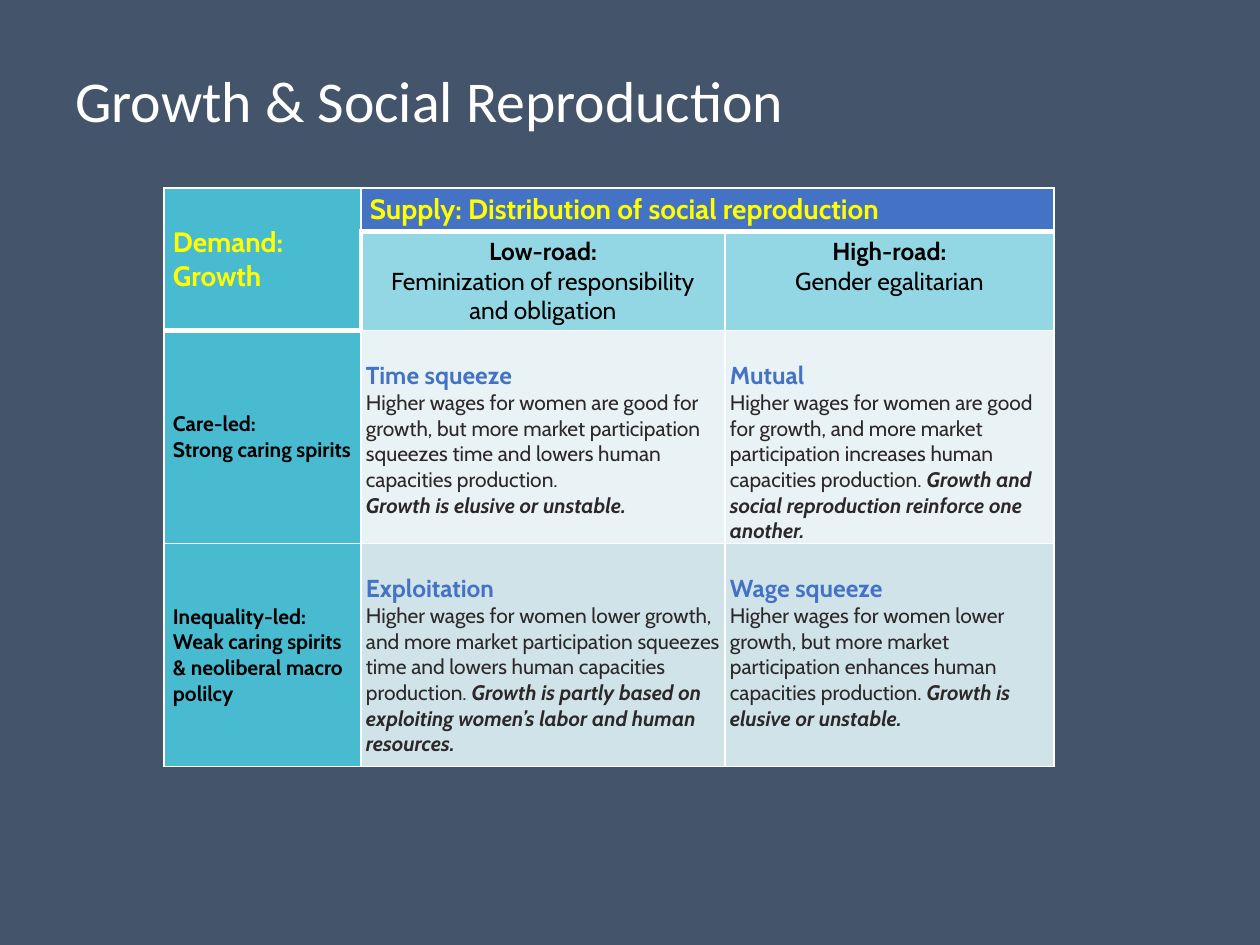
import dataclasses

import pptx
import pptx.dml.color
import pptx.enum.text
import pptx.util
from lxml import etree
from pptx.oxml.ns import qn

ANCHOR = pptx.enum.text.MSO_ANCHOR
ALIGN = pptx.enum.text.PP_ALIGN


@dataclasses.dataclass(frozen=True)
class Theme:
    background: str = "44546A"
    white: str = "FFFFFF"
    black: str = "000000"
    yellow: str = "FFFF00"
    body: str = "2C2728"
    blue: str = "4472C4"
    teal: str = "49BBD1"
    light_teal: str = "94D7E4"
    upper_band: str = "E9F2F4"
    lower_band: str = "CFE3E8"
    title_font: str = "Calibri"
    table_font: str = "Cabin"
    title_size: int = 33
    axis_size: int = 16
    heading_size: int = 14
    body_size: int = 12


THEME = Theme()


def px(length):
    return pptx.util.Emu(round(length * 914400 / 126))


def rgb(color):
    return pptx.dml.color.RGBColor.from_string(color)


def add_text(paragraph, text, *, size, color, font=THEME.table_font, bold=False, italic=False):
    run = paragraph.add_run()
    run.text = text
    run.font.name = font
    run.font.size = pptx.util.Pt(size)
    run.font.color.rgb = rgb(color)
    run.font.bold = bold
    run.font.italic = italic


class SlideBuilder:
    def __init__(self, presentation, theme):
        self.theme = theme
        self.slide = presentation.slides.add_slide(presentation.slide_layouts[6])
        fill = self.slide.background.fill
        fill.solid()
        fill.fore_color.rgb = rgb(theme.background)

    def title(self, text, left, top, width, height):
        frame = self.slide.shapes.add_textbox(px(left), px(top), px(width), px(height)).text_frame
        frame.word_wrap = True
        frame.vertical_anchor = ANCHOR.MIDDLE
        frame.paragraphs[0].line_spacing = 0.9
        add_text(frame.paragraphs[0], text, size=self.theme.title_size,
                 color=self.theme.white, font=self.theme.title_font)

    def table(self, left, top, columns, rows):
        table = self.slide.shapes.add_table(
            len(rows), len(columns), px(left), px(top), px(sum(columns)), px(sum(rows))).table
        table.first_row = table.horz_banding = False
        for column, width in zip(table.columns, columns):
            column.width = px(width)
        for row, height in zip(table.rows, rows):
            row.height = px(height)
        return table

    def borders(self, cell, heavy=""):
        """Draw white borders; sides named in heavy (of L, R, T, B) are thick."""
        properties = cell._tc.get_or_add_tcPr()
        for side in "LRTB":
            points = 3 if side in heavy else 1
            line = etree.SubElement(properties, qn(f"a:ln{side}"), w=str(pptx.util.Pt(points)))
            solid = etree.SubElement(line, qn("a:solidFill"))
            etree.SubElement(solid, qn("a:srgbClr"), val=self.theme.white)

    def cell(self, cell, fill, paragraphs, *, margins=(9, 5, 9, 5),
             anchor=ANCHOR.TOP, align=ALIGN.LEFT):
        """Fill a cell; each paragraph is a list of (text, format) pairs."""
        cell.fill.solid()
        cell.fill.fore_color.rgb = rgb(fill)
        cell.margin_left, cell.margin_top, cell.margin_right, cell.margin_bottom = map(px, margins)
        cell.vertical_anchor = anchor
        frame = cell.text_frame
        for index, runs in enumerate(paragraphs):
            paragraph = frame.add_paragraph() if index else frame.paragraphs[0]
            paragraph.alignment = align
            for text, style in runs:
                add_text(paragraph, text, **style)


def main():
    presentation = pptx.Presentation()
    presentation.slide_width, presentation.slide_height = px(1260), px(945)
    builder = SlideBuilder(presentation, THEME)
    builder.title("Growth & Social Reproduction", 63, 62, 1118, 83)

    # Text formats by role
    axis = dict(size=THEME.axis_size, color=THEME.yellow, bold=True)
    road_name = dict(size=THEME.heading_size, color=THEME.black, bold=True)
    road_detail = dict(road_name, bold=False)
    regime = dict(size=THEME.body_size, color=THEME.black, bold=True)
    outcome = dict(size=THEME.heading_size, color=THEME.blue, bold=True)
    reason = dict(size=THEME.body_size, color=THEME.body)
    verdict = dict(reason, bold=True, italic=True)

    # Grid, with thick lines around the header
    grid = builder.table(164, 188, columns=(197, 364, 329), rows=(42, 99, 213, 223))
    heavy_sides = {(0, 0): "B", (0, 1): "B", (0, 2): "B", (1, 0): "B",
                   (1, 1): "LT", (1, 2): "T", (2, 0): "T"}
    for row in range(4):
        for column in range(3):
            builder.borders(grid.cell(row, column), heavy_sides.get((row, column), ""))
    grid.cell(0, 0).merge(grid.cell(1, 0))
    grid.cell(0, 1).merge(grid.cell(0, 2))

    # Axis names
    builder.cell(grid.cell(0, 0), THEME.teal, [[("Demand: Growth", axis)]], anchor=ANCHOR.MIDDLE)
    builder.cell(grid.cell(0, 1), THEME.blue,
                 [[("Supply: Distribution of social reproduction", axis)]])

    # Supply columns
    roads = [("Low-road:", "Feminization of responsibility and obligation"),
             ("High-road:", "Gender egalitarian")]
    for column, (name, detail) in enumerate(roads, start=1):
        builder.cell(grid.cell(1, column), THEME.light_teal,
                     [[(name, road_name)], [(detail, road_detail)]], align=ALIGN.CENTER)

    # Demand rows and their outcomes
    regimes = [
        ("Care-led:", "Strong caring spirits", THEME.upper_band, [
            [[("Time squeeze", outcome)],
             [("Higher wages for women are good for growth, but more market participation "
               "squeezes time and lowers human capacities production.", reason)],
             [("Growth is elusive or unstable.", verdict)]],
            [[("Mutual", outcome)],
             [("Higher wages for women are good for growth, and more market participation "
               "increases human capacities production. ", reason),
              ("Growth and social reproduction reinforce one another.", verdict)]],
        ]),
        ("Inequality-led:", "Weak caring spirits & neoliberal macro polilcy", THEME.lower_band, [
            [[("Exploitation", outcome)],
             [("Higher wages for women lower growth, and more market participation "
               "squeezes time and lowers human capacities production. ", reason),
              ("Growth is partly based on exploiting women’s labor and human resources.",
               verdict)]],
            [[("Wage squeeze", outcome)],
             [("Higher wages for women lower growth, but more market participation "
               "enhances human capacities production. ", reason),
              ("Growth is elusive or unstable.", verdict)]],
        ]),
    ]
    for row, (name, detail, band, outcomes) in enumerate(regimes, start=2):
        builder.cell(grid.cell(row, 0), THEME.teal,
                     [[(name, regime)], [(detail, regime)]], anchor=ANCHOR.MIDDLE)
        for column, paragraphs in enumerate(outcomes, start=1):
            builder.cell(grid.cell(row, column), band, paragraphs, margins=(5, 30, 5, 0))

    presentation.save("out.pptx")


if __name__ == "__main__":
    main()
